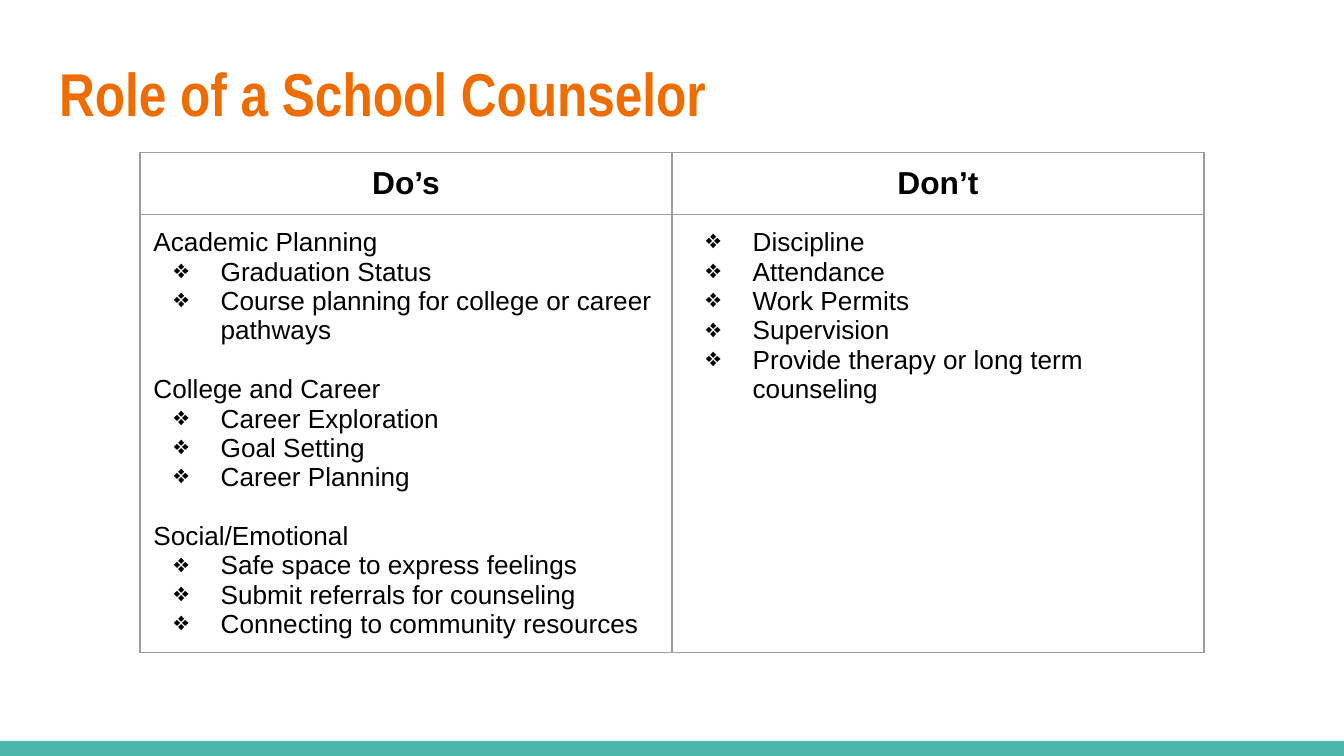
import pptx
import pptx.dml.color
import pptx.enum.shapes
import pptx.enum.text
import pptx.oxml
import pptx.oxml.ns
import pptx.util

Pt = pptx.util.Pt
ALIGN = pptx.enum.text.PP_ALIGN
ANCHOR = pptx.enum.text.MSO_ANCHOR

# Content: each column holds (heading, bullet items) groups
TITLE = "Role of a School Counselor"
COLUMNS = [
    ("Do’s", [
        ("Academic Planning", ["Graduation Status",
                               "Course planning for college or career pathways"]),
        ("College and Career", ["Career Exploration", "Goal Setting", "Career Planning"]),
        ("Social/Emotional", ["Safe space to express feelings",
                              "Submit referrals for counseling",
                              "Connecting to community resources"]),
    ]),
    ("Don’t", [
        (None, ["Discipline", "Attendance", "Work Permits", "Supervision",
                "Provide therapy or long term counseling"]),
    ]),
]
COLORS = {"title": "EF6C00", "text": "000000", "bar": "4DB6AC", "border": "9E9E9E"}

# Layout in points
PAGE_WIDTH, PAGE_HEIGHT = 720, 405
BAR_HEIGHT = 8
INSET = 7.2
TABLE_LEFT, TABLE_TOP, COLUMN_WIDTH = 75, 81.5, 285
ROW_HEIGHTS = [33.3, 117.3, 117.3]
BODY_SIZE, GROUP_GAP = 14, 15.75
BULLET_INDENT, BULLET_HANG = 36, 25


def color(name):
    return pptx.dml.color.RGBColor.from_string(COLORS[name])


def set_insets(target):
    target.margin_left = target.margin_right = Pt(INSET)
    target.margin_top = target.margin_bottom = Pt(INSET)


def style(para, size, name="text", font="Arial", bold=False):
    para.font.size, para.font.name, para.font.bold = Pt(size), font, bold
    para.font.color.rgb = color(name)


def xml(text):
    return pptx.oxml.parse_xml(text.replace(">", f" {pptx.oxml.ns.nsdecls('a')}>", 1))


def add_bullet(para):
    properties = para._p.get_or_add_pPr()
    properties.set("marL", str(Pt(BULLET_INDENT)))
    properties.set("indent", str(-Pt(BULLET_HANG)))
    bullet_color = xml(f'<a:buClr><a:srgbClr val="{COLORS["text"]}"/></a:buClr>')
    bullet = xml('<a:buChar char="❖"></a:buChar>')
    properties.insert_element_before(bullet_color, "a:buFont", "a:buChar", "a:defRPr")
    properties.insert_element_before(bullet, "a:defRPr")


def format_cell(cell):
    set_insets(cell)
    cell.vertical_anchor = ANCHOR.TOP
    properties = cell._tc.get_or_add_tcPr()
    for side in ("lnL", "lnR", "lnT", "lnB"):
        properties.append(xml(
            f'<a:{side} w="{Pt(0.75)}"><a:solidFill><a:srgbClr val="{COLORS["border"]}"/>'
            f'</a:solidFill></a:{side}>'))
    cell.fill.background()


def fill_body(cell, groups):
    lines = []
    for group, (heading, items) in enumerate(groups):
        if heading:
            lines.append((heading, False, GROUP_GAP if group else 0))
        lines += [(item, True, 0) for item in items]
    for index, (text, bulleted, gap) in enumerate(lines):
        frame = cell.text_frame
        para = frame.add_paragraph() if index else frame.paragraphs[0]
        para.text = text
        style(para, BODY_SIZE)
        para.space_before = Pt(gap)
        if bulleted:
            add_bullet(para)


deck = pptx.Presentation()
deck.slide_width, deck.slide_height = Pt(PAGE_WIDTH), Pt(PAGE_HEIGHT)
page = deck.slides.add_slide(deck.slide_layouts[5])

# Title
title = page.shapes.title
title.left, title.top, title.width, title.height = Pt(24.5), Pt(21.6), Pt(671), Pt(55.4)
frame = title.text_frame
set_insets(frame)
frame.word_wrap = True
frame.auto_size = pptx.enum.text.MSO_AUTO_SIZE.NONE
frame.vertical_anchor = ANCHOR.MIDDLE
frame.text = TITLE
frame.paragraphs[0].alignment = ALIGN.LEFT
style(frame.paragraphs[0], 32.4, "title", "Arial Narrow", True)

# Bottom bar
bar = page.shapes.add_shape(
    pptx.enum.shapes.MSO_SHAPE.RECTANGLE,
    0, Pt(PAGE_HEIGHT - BAR_HEIGHT), Pt(PAGE_WIDTH), Pt(BAR_HEIGHT))
bar.shadow.inherit = False
bar.fill.solid()
bar.fill.fore_color.rgb = color("bar")
bar.line.fill.background()

# Table: a header row above one tall merged cell per column
table = page.shapes.add_table(
    len(ROW_HEIGHTS), len(COLUMNS), Pt(TABLE_LEFT), Pt(TABLE_TOP),
    Pt(COLUMN_WIDTH * len(COLUMNS)), Pt(sum(ROW_HEIGHTS))).table
table.first_row = table.horz_banding = False
for row, height in zip(table.rows, ROW_HEIGHTS):
    row.height = Pt(height)
for cell in table.iter_cells():
    format_cell(cell)
for index, (header, groups) in enumerate(COLUMNS):
    table.columns[index].width = Pt(COLUMN_WIDTH)
    para = table.cell(0, index).text_frame.paragraphs[0]
    para.text = header
    para.alignment = ALIGN.CENTER
    style(para, 17, bold=True)
    body = table.cell(1, index)
    body.merge(table.cell(2, index))
    fill_body(body, groups)

deck.save("out.pptx")
